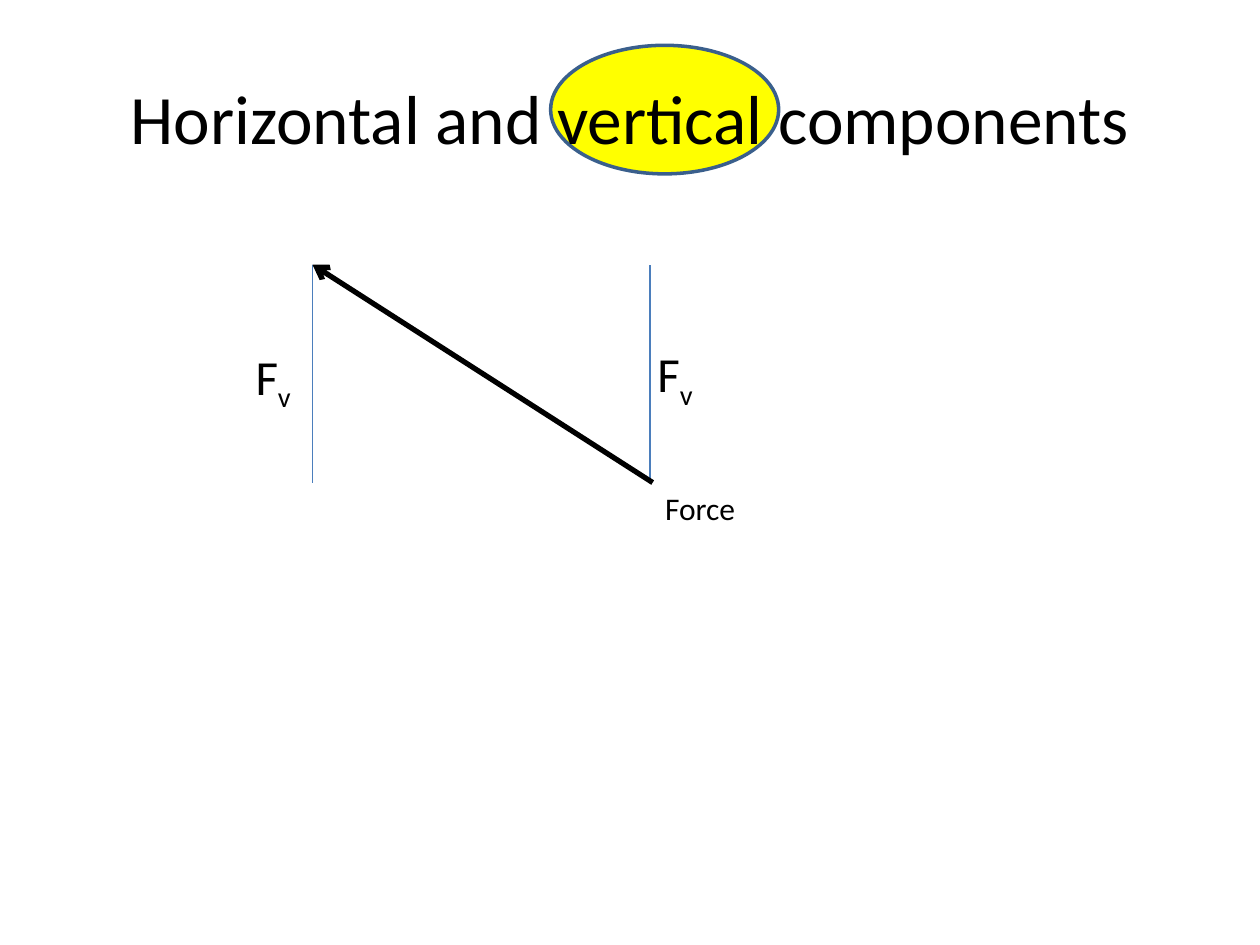
from dataclasses import dataclass

from lxml.etree import SubElement
from pptx import Presentation
from pptx.dml.color import RGBColor as Color
from pptx.enum.shapes import MSO_CONNECTOR as Connector, MSO_SHAPE as Shape
from pptx.enum.text import MSO_ANCHOR as Anchor, MSO_AUTO_SIZE as AutoSize, PP_ALIGN as Align
from pptx.oxml.ns import qn
from pptx.util import Inches, Pt


@dataclass(frozen=True)
class Theme:
    font: str = "Calibri"
    ink: Color = Color(0x00, 0x00, 0x00)
    guide: Color = Color(0x4B, 0x7E, 0xBC)
    outline: Color = Color(0x3A, 0x5F, 0x8C)
    highlight: Color = Color(0xFF, 0xFF, 0x00)
    title_size: float = 39.6
    symbol_size: float = 28
    label_size: float = 18


class SlideBuilder:
    def __init__(self, page, theme):
        self.page = page
        self.theme = theme

    def span(self, para, text, size, subscript=False):
        span = para.add_run()
        span.text = text
        span.font.name = self.theme.font
        span.font.size = Pt(size)
        span.font.color.rgb = self.theme.ink
        if subscript:
            span.font._element.set("baseline", "-25000")

    def title(self, text, left, top, width, height):
        box = self.page.shapes.title
        box.left, box.top = Inches(left), Inches(top)
        box.width, box.height = Inches(width), Inches(height)
        frame = box.text_frame
        frame.auto_size = AutoSize.NONE
        frame.vertical_anchor = Anchor.MIDDLE
        para = frame.paragraphs[0]
        para.alignment = Align.CENTER
        self.span(para, text, self.theme.title_size)

    def title_highlight(self, left, top, width, height):
        oval = self.page.shapes.add_shape(
            Shape.OVAL, Inches(left), Inches(top), Inches(width), Inches(height)
        )
        oval.shadow.inherit = False
        oval.fill.solid()
        oval.fill.fore_color.rgb = self.theme.highlight
        oval.line.color.rgb = self.theme.outline
        oval.line.width = Pt(2)
        self.page.shapes.title.element.addprevious(oval.element)

    def label(self, text, size, left, top, width, height, subscript="", wrap=True):
        box = self.page.shapes.add_textbox(
            Inches(left), Inches(top), Inches(width), Inches(height)
        )
        frame = box.text_frame
        frame.word_wrap = wrap
        frame.auto_size = AutoSize.SHAPE_TO_FIT_TEXT
        para = frame.paragraphs[0]
        self.span(para, text, size)
        if subscript:
            self.span(para, subscript, size, subscript=True)

    def line(self, start, end, color, weight, arrow=False):
        line = self.page.shapes.add_connector(
            Connector.STRAIGHT, *(Inches(value) for value in (*start, *end))
        )
        line.line.color.rgb = color
        line.line.width = Pt(weight)
        if arrow:
            SubElement(line.line._get_or_add_ln(), qn("a:tailEnd"), type="arrow")
        SubElement(line.element.spPr, qn("a:effectLst"))


def main():
    deck = Presentation()
    deck.slide_width, deck.slide_height = Inches(10), Inches(7.5)
    theme = Theme()
    slide = SlideBuilder(deck.slides.add_slide(deck.slide_layouts[5]), theme)

    slide.title("Horizontal and vertical components", 0.5, 0.3, 9, 1.25)
    slide.title_highlight(4.37, 0.36, 1.81, 1.02)

    tip_x, tip_y, base_y = 2.48, 2.1, 3.83
    for x in (5.16, tip_x):
        slide.line((x, base_y), (x, tip_y), theme.guide, 0.75)

    slide.label("Force", theme.label_size, 5.18, base_y, 0.76, 0.4, wrap=False)
    for left, top in ((1.93, 2.7), (5.12, 2.68)):
        slide.label("F", theme.symbol_size, left, top, 0.63, 0.57, subscript="v")

    slide.line((5.18, base_y), (tip_x, tip_y), theme.ink, 3, arrow=True)
    deck.save("out.pptx")


if __name__ == "__main__":
    main()
